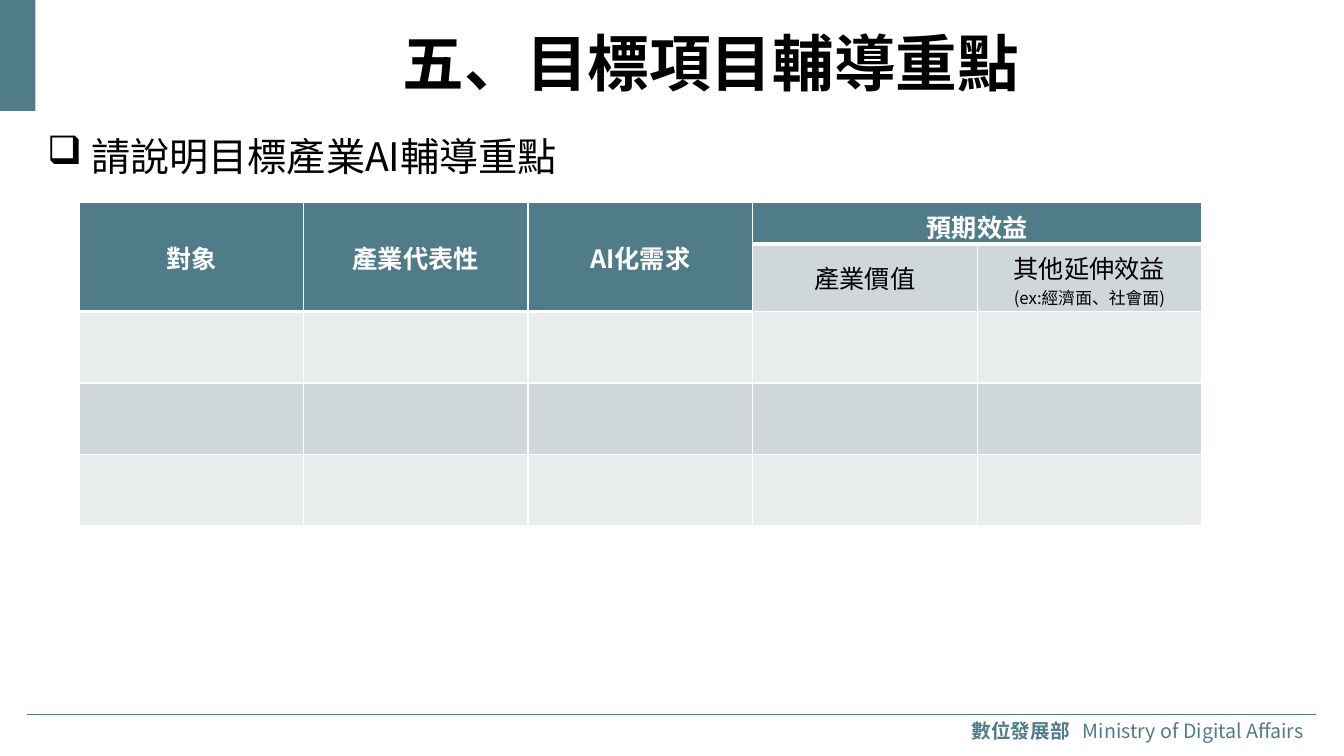
from lxml import etree
from pptx import Presentation
from pptx.dml.color import RGBColor
from pptx.enum.shapes import MSO_CONNECTOR, MSO_SHAPE
from pptx.enum.text import MSO_ANCHOR, PP_ALIGN
from pptx.oxml.ns import qn
from pptx.util import Pt

LEFT, CENTER = PP_ALIGN.LEFT, PP_ALIGN.CENTER
TOP, MIDDLE = MSO_ANCHOR.TOP, MSO_ANCHOR.MIDDLE
SC, TC = "Noto Sans CJK SC", "Noto Sans CJK TC"
TEAL, WHITE, BLACK = "507C89", "FFFFFF", "000000"
BAND_DARK, BAND_LIGHT = "D0D7DA", "E9ECED"


def rgb(value):
    return RGBColor.from_string(value)


def add_text(p, text, size=18, font=SC, color=BLACK, bold=False, align=LEFT):
    p.alignment = align
    r = p.add_run()
    r.text = text
    r.font.size, r.font.name, r.font.bold = Pt(size), font, bold
    r.font.color.rgb = rgb(color)
    ea = etree.SubElement(r._r.get_or_add_rPr(), qn("a:ea"))
    ea.set("typeface", font)


prs = Presentation()
prs.slide_width, prs.slide_height = Pt(960), Pt(540)
s = prs.slides.add_slide(prs.slide_layouts[6])

# Footer rule and corner block
rule = s.shapes.add_connector(MSO_CONNECTOR.STRAIGHT, Pt(19.4), Pt(510.5), Pt(940.3), Pt(510.5))
rule.line.color.rgb = rgb(TEAL)
rule.line.width = Pt(0.5)
etree.SubElement(rule._element.spPr, qn("a:effectLst"))

block = s.shapes.add_shape(MSO_SHAPE.RECTANGLE, 0, 0, Pt(25.4), Pt(79.2))
block.shadow.inherit = False
block.fill.solid()
block.fill.fore_color.rgb = rgb(TEAL)
block.line.fill.background()

# Text boxes: left, top, width, height, anchor
boxes = {
    "footer": (686.9, 510.5, 253.4, 23, MIDDLE),
    "title": (82.8, 8.6, 850.3, 70.6, MIDDLE),
    "body": (26.6, 90.7, 907.2, 411.1, TOP),
}
paragraphs = {}
for name, (*place, anchor) in boxes.items():
    sp = s.shapes.add_textbox(*[Pt(v) for v in place])
    tf = sp.text_frame
    tf.word_wrap = True
    tf.vertical_anchor = anchor
    paragraphs[name] = tf.paragraphs[0]

# Footer: the English name starts at a tab stop
p = paragraphs["footer"]
tabs = etree.SubElement(p._p.get_or_add_pPr(), qn("a:tabLst"))
etree.SubElement(tabs, qn("a:tab"), pos=str(Pt(79.5)), algn="l")
add_text(p, "數位發展部", size=14, font=TC, color=TEAL, bold=True)
add_text(p, "\tMinistry of Digital Affairs", size=14, font=TC, color=TEAL)

# Title and bulleted lead
add_text(paragraphs["title"], "五、目標項目輔導重點", size=44, font=TC, bold=True, align=CENTER)

p = paragraphs["body"]
pPr = p._p.get_or_add_pPr()
pPr.set("marL", str(Pt(31.5)))
pPr.set("indent", str(-Pt(31.5)))
etree.SubElement(pPr, qn("a:buChar"), char="❑")
add_text(p, "請說明目標產業AI輔導重點", size=28)

# Table grid
row_heights = [29.2, 48.5, 51, 51, 51]
row_fills = [TEAL, BAND_DARK, BAND_LIGHT, BAND_DARK, BAND_LIGHT]
columns = 5
table = s.shapes.add_table(len(row_heights), columns, Pt(56.4), Pt(144.9),
                           Pt(802), Pt(sum(row_heights))).table
table.first_row = table.horz_banding = False
for column in table.columns:
    column.width = Pt(802 / columns)

for row, (height, fill) in enumerate(zip(row_heights, row_fills)):
    table.rows[row].height = Pt(height)
    for col in range(columns):
        cell = table.cell(row, col)
        cell.vertical_anchor = MIDDLE
        header = row == 0 or (row == 1 and col < 3)
        for side, width in (("L", 1), ("R", 1), ("B", 3 if header else 1)):
            ln = etree.SubElement(cell._tc.get_or_add_tcPr(), qn("a:ln" + side), w=str(Pt(width)))
            solid = etree.SubElement(ln, qn("a:solidFill"))
            etree.SubElement(solid, qn("a:srgbClr"), val=WHITE)
        cell.fill.solid()
        cell.fill.fore_color.rgb = rgb(TEAL if header else fill)

# Header cells
for col in range(3):
    table.cell(0, col).merge(table.cell(1, col))
table.cell(0, 3).merge(table.cell(0, 4))
for col, heading in enumerate(["對象", "產業代表性", "AI化需求", "預期效益"]):
    add_text(table.cell(0, col).text_frame.paragraphs[0], heading,
             color=WHITE, bold=True, align=CENTER)

# Sub-headings under the last header
for col, heading in enumerate(["產業價值", "其他延伸效益"], start=3):
    add_text(table.cell(1, col).text_frame.paragraphs[0], heading, align=CENTER)
add_text(table.cell(1, 4).text_frame.add_paragraph(), "(ex:經濟面、社會面)", size=12, align=CENTER)

prs.save("out.pptx")
